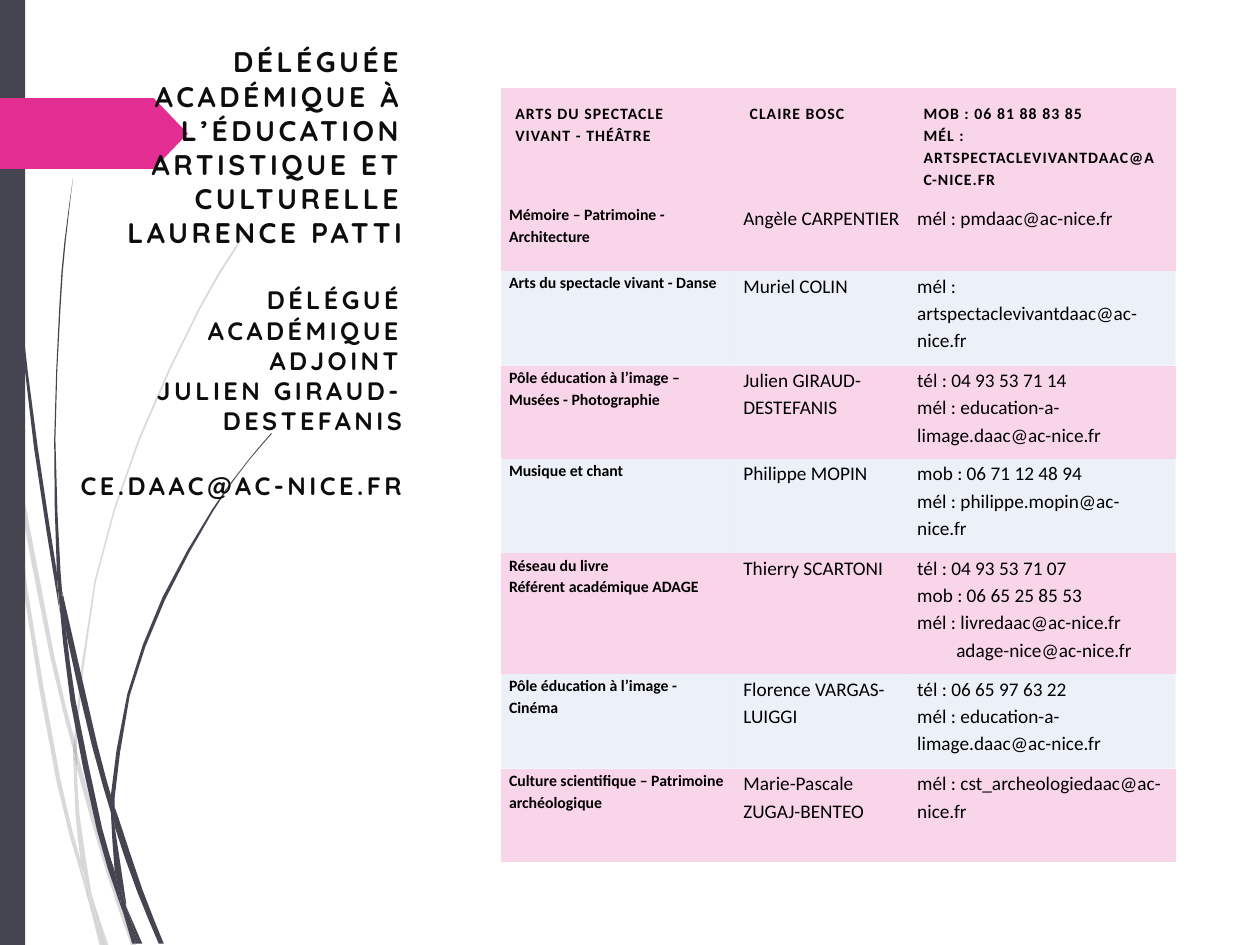
from lxml import etree
from pptx import Presentation
from pptx import util as u
from pptx.dml.color import RGBColor
from pptx.enum import shapes, text
from pptx.oxml.ns import qn

COLORS = {"slate": "454551", "magenta": "E32D91", "pink": "F9D5E9",
          "blue": "DAE3F3", "title": "0D0D0D", "black": "000000"}
NO_STYLE = "{2D5ABB26-0587-4C30-8999-92F81FD0307C}"

LIGHT_WISPS = [
    ([(0.1, 3.45), (0.12, 3.76), (0.4, 5.22), (0.59, 5.99)],
     [(0.59, 5.86), (0.43, 5.2), (0.1, 3.45)]),
    ([(0.61, 5.96), (0.61, 6.1), (0.85, 6.94), (1.04, 7.5)],
     [(1.08, 7.5), (0.88, 6.92), (0.64, 6.07), (0.61, 5.96)]),
    ([(0.73, 7.11), (0.83, 7.5)], [(0.86, 7.5), (0.73, 7.11)]),
    ([(0.08, 3.5), (0.19, 4.7), (0.45, 6.21), (0.64, 6.93), (0.7, 7.14)],
     [(0.69, 7.07), (0.64, 6.83), (0.48, 6.19), (0.22, 4.69), (0.12, 3.76), (0.08, 3.5)]),
    ([(0.58, 5.99), (0.6, 6.46), (0.64, 6.83), (0.67, 6.92), (0.73, 7.11)],
     [(0.72, 7.06), (0.63, 6.46), (0.61, 6.1), (0.58, 5.99)]),
    ([(2.17, 1.53), (2.01, 1.75), (1.86, 1.97), (1.58, 2.44), (1.1, 3.48),
      (0.75, 4.61), (0.59, 5.84), (0.61, 5.96)],
     [(0.61, 5.84), (0.76, 4.62), (1.11, 3.49), (1.59, 2.45), (1.87, 1.98),
      (2.01, 1.75), (2.17, 1.54)]),
    ([(0.7, 7.14), (0.79, 7.5)], [(0.82, 7.5), (0.7, 7.14)]),
    ([(0.59, 5.86), (0.58, 5.99), (0.61, 6.08)], [(0.61, 6.1), (0.61, 5.96), (0.59, 5.86)]),
    ([(0.65, 6.83), (0.69, 7.07), (0.7, 7.14), (0.82, 7.5)],
     [(0.83, 7.5), (0.73, 7.11), (0.67, 6.92), (0.65, 6.83)]),
]
DARK_WISPS = [
    ([(0.02, 0), (0.03, 0.48), (0.05, 1.1), (0.14, 2.33), (0.27, 3.55), (0.46, 4.77),
      (0.47, 4.81)],
     [(0.45, 4.57), (0.45, 4.53), (0.3, 3.55), (0.15, 2.32), (0.06, 1.09), (0.04, 0.48),
      (0.03, 0)]),
    ([(0.5, 4.72), (0.53, 5.05), (0.73, 5.92), (0.88, 6.45)],
     [(0.88, 6.31), (0.77, 5.9), (0.5, 4.72)]),
    ([(0.91, 6.41), (0.91, 6.56), (1.09, 7.08), (1.26, 7.49)],
     [(1.3, 7.49), (1.13, 7.06), (0.94, 6.49), (0.91, 6.41)]),
    ([(0.47, 4.77), (0.56, 5.57), (0.77, 6.59), (0.92, 7.08), (0.97, 7.22)],
     [(0.96, 7.17), (0.91, 6.91), (0.81, 6.57), (0.6, 5.56), (0.53, 5.05), (0.47, 4.77)]),
    ([(0.58, 1.41), (0.51, 1.93), (0.47, 2.45), (0.43, 3.49), (0.45, 4.49), (0.49, 4.72)],
     [(0.5, 4.72), (0.48, 4.53), (0.44, 3.49), (0.48, 2.45), (0.52, 1.93), (0.58, 1.41)]),
    ([(1, 7.19), (1.1, 7.49)], [(1.13, 7.49), (1, 7.19)]),
    ([(0.45, 4.49), (0.45, 4.53), (0.47, 4.77), (0.53, 5.05)],
     [(0.5, 4.72), (0.49, 4.72), (0.45, 4.49)]),
    ([(2.15, 3.44), (2.03, 3.58), (1.91, 3.73), (1.68, 4.05), (1.29, 4.74), (1.01, 5.51),
      (0.88, 6.31), (0.91, 6.41)],
     [(0.91, 6.33), (1.03, 5.52), (1.31, 4.76), (1.69, 4.06), (1.91, 3.74), (2.03, 3.59),
      (2.16, 3.44)]),
    ([(0.97, 7.22), (1.05, 7.49)], [(1.08, 7.49), (0.97, 7.22)]),
    ([(0.88, 6.45), (0.91, 6.91), (0.96, 7.06), (1, 7.19)],
     [(1, 7.16), (0.91, 6.56), (0.88, 6.45)]),
    ([(0.88, 6.31), (0.88, 6.45), (0.91, 6.56)], [(0.91, 6.41), (0.88, 6.31)]),
    ([(0.91, 6.91), (0.96, 7.17), (0.97, 7.22), (1.08, 7.49)],
     [(1.1, 7.49), (1, 7.19), (0.96, 7.06), (0.91, 6.91)]),
]

TITLE = [
    ("DÉLÉGUÉE ACADÉMIQUE À L’ÉDUCATION ARTISTIQUE ET CULTURELLE\vLAURENCE PATTI", 16.2, 0),
    ("DÉLÉGUÉ ACADÉMIQUE ADJOINT\vJULIEN GIRAUD-DESTEFANIS", 14.4, 20.5),
    ("CE.DAAC@AC-NICE.FR", 14.4, 19.5),
]
COLUMNS = [1.86, 1.38, 2.11]
ROW_HEIGHTS = [0.89, 0.54, 0.75, 0.74, 0.75, 0.96, 0.75, 0.74]
INDENTED = "adage-nice@ac-nice.fr"
CONTACTS = [
    ("ARTS DU SPECTACLE VIVANT - THÉÂTRE", "CLAIRE BOSC",
     "MOB : 06 81 88 83 85\nMÉL : ARTSPECTACLEVIVANTDAAC@AC-NICE.FR"),
    ("Mémoire – Patrimoine - Architecture", "Angèle CARPENTIER", "mél : pmdaac@ac-nice.fr"),
    ("Arts du spectacle vivant - Danse", "Muriel COLIN",
     "mél : artspectaclevivantdaac@ac-nice.fr"),
    ("Pôle éducation à l’image – Musées - Photographie", "Julien GIRAUD-DESTEFANIS",
     "tél : 04 93 53 71 14\nmél : education-a-limage.daac@ac-nice.fr"),
    ("Musique et chant", "Philippe MOPIN",
     "mob : 06 71 12 48 94\nmél : philippe.mopin@ac-nice.fr"),
    ("Réseau du livre\nRéférent académique ADAGE", "Thierry SCARTONI",
     "tél : 04 93 53 71 07\nmob : 06 65 25 85 53\nmél : livredaac@ac-nice.fr\n" + INDENTED),
    ("Pôle éducation à l’image - Cinéma", "Florence VARGAS-LUIGGI",
     "tél : 06 65 97 63 22\nmél : education-a-limage.daac@ac-nice.fr"),
    ("Culture scientifique – Patrimoine archéologique", "Marie-Pascale ZUGAJ-BENTEO",
     "mél : cst_archeologiedaac@ac-nice.fr"),
]


def set_fill(fill, color, alpha=100):
    fill.solid()
    fill.fore_color.rgb = RGBColor.from_string(COLORS[color])
    if alpha < 100:
        clr = fill._xPr.find(qn("a:solidFill"))[0]
        etree.SubElement(clr, qn("a:alpha")).set("val", str(alpha * 1000))


def paint(sp, color, alpha=100):
    sp.shadow.inherit = False
    sp.line.fill.background()
    set_fill(sp.fill, color, alpha)


def set_font(p, name, size, color, bold, spacing=0):
    p.font.name = name
    p.font.size = u.Pt(size)
    p.font.bold = bold
    p.font.color.rgb = RGBColor.from_string(COLORS[color])
    p.font._element.set("spc", str(int(spacing * 100)))


def smooth(points):
    ext = [points[0], *points, points[-1]]
    curve = [points[0]]
    for a, b, c, d in zip(ext, ext[1:], ext[2:], ext[3:]):
        if len(points) > 2:
            curve.append(tuple((9 * (q + r) - p - s) / 16 for p, q, r, s in zip(a, b, c, d)))
        curve.append(c)
    return curve


def add_wisp(s, edges, alpha):
    outline = [(u.Inches(x), u.Inches(y)) for edge in edges for x, y in smooth(edge)]
    builder = s.shapes.build_freeform(*outline[0])
    builder.add_line_segments(outline[1:], close=True)
    paint(builder.convert_to_shape(), "slate", alpha)


def add_block(s, kind, box, color):
    sp = s.shapes.add_shape(kind, *map(u.Inches, box))
    paint(sp, color)
    return sp


def add_title(s):
    tf = s.shapes.add_textbox(*map(u.Inches, (0.52, 0.7, 2.77, 3.32))).text_frame
    tf.word_wrap = True
    tf.vertical_anchor = text.MSO_ANCHOR.BOTTOM
    for i, (words, size, gap) in enumerate(TITLE):
        p = tf.paragraphs[0] if i == 0 else tf.add_paragraph()
        p.text = words
        p.alignment = text.PP_ALIGN.RIGHT
        p.space_before = u.Pt(gap)
        set_font(p, "Quicksand", size, "title", True, 2)


def fill_cell(cell, words, row, col):
    header = row == 0
    margins = (0.11, 0.11, 0.11, 0.11) if header else (0.06, 0, 0.06, 0.07)
    (cell.margin_left, cell.margin_top,
     cell.margin_right, cell.margin_bottom) = map(u.Inches, margins)
    if row in (2, 4, 6):
        set_fill(cell.fill, "blue", 50)
    else:
        set_fill(cell.fill, "pink")
    cell.text = words
    bold = header or col == 0
    for p in cell.text_frame.paragraphs:
        p.line_spacing = 1.15
        set_font(p, "Calibri", 9 if bold else 11, "black", bold, 0.6 if header else 0)
        if p.text == INDENTED:
            p._p.get_or_add_pPr().set("marL", str(u.Inches(0.31)))


def add_contacts(s):
    box = (3.98, 0.7, sum(COLUMNS), sum(ROW_HEIGHTS))
    table = s.shapes.add_table(len(CONTACTS), len(COLUMNS), *map(u.Inches, box)).table
    table.first_row = table.horz_banding = False
    table._tbl.tblPr.find(qn("a:tableStyleId")).text = NO_STYLE
    for column, width in zip(table.columns, COLUMNS):
        column.width = u.Inches(width)
    for i, (height, contact) in enumerate(zip(ROW_HEIGHTS, CONTACTS)):
        table.rows[i].height = u.Inches(height)
        for j, words in enumerate(contact):
            fill_cell(table.cell(i, j), words, i, j)


def main():
    prs = Presentation()
    prs.slide_width, prs.slide_height = u.Inches(10), u.Inches(7.5)
    s = prs.slides.add_slide(prs.slide_layouts[6])
    for wisps, alpha in ((LIGHT_WISPS, 20), (DARK_WISPS, 100)):
        for edges in wisps:
            add_wisp(s, edges, alpha)
    add_block(s, shapes.MSO_SHAPE.RECTANGLE, (0, 0, 0.2, 7.5), "slate")
    arrow = add_block(s, shapes.MSO_SHAPE.PENTAGON, (0, 0.78, 1.49, 0.56), "magenta")
    arrow.adjustments[0] = 0.48
    add_title(s)
    add_contacts(s)
    prs.save("out.pptx")


if __name__ == "__main__":
    main()
